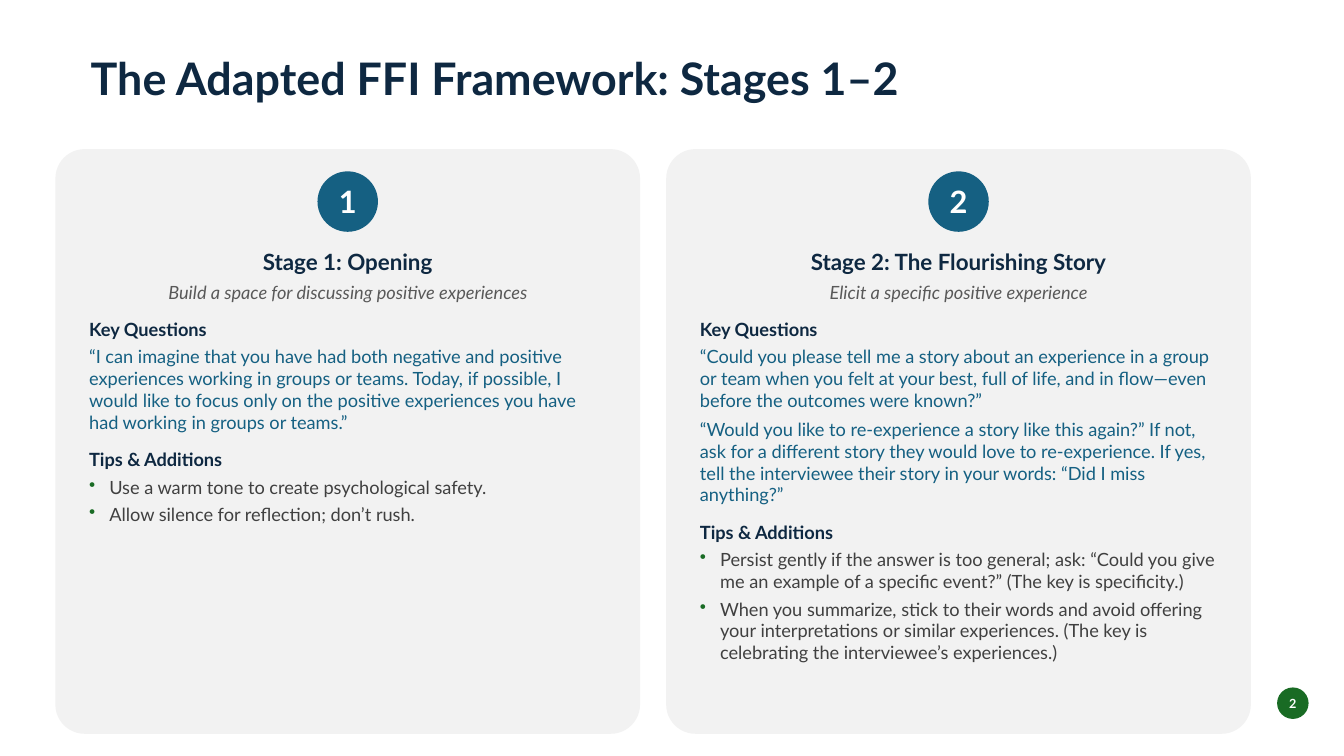
"""Build the slide on stages 1 and 2 of the adapted FFI framework."""
from lxml import etree
from pptx import Presentation
from pptx.dml.color import RGBColor
from pptx.enum.shapes import MSO_SHAPE
from pptx.enum.text import MSO_ANCHOR, MSO_AUTO_SIZE, PP_ALIGN
from pptx.oxml.ns import qn
from pptx.util import Pt

OVAL, ROUND = MSO_SHAPE.OVAL, MSO_SHAPE.ROUNDED_RECTANGLE
TOP, MIDDLE = MSO_ANCHOR.TOP, MSO_ANCHOR.MIDDLE
LEFT, CENTER = PP_ALIGN.LEFT, PP_ALIGN.CENTER
NAVY = RGBColor(0x0E, 0x28, 0x41)
TEAL = RGBColor(0x15, 0x60, 0x82)
GREEN = RGBColor(0x19, 0x6B, 0x24)
PALE = RGBColor(0xF2, 0xF2, 0xF2)
GRAY = RGBColor(0x59, 0x59, 0x59)
DARK = RGBColor(0x40, 0x40, 0x40)
WHITE = RGBColor(0xFF, 0xFF, 0xFF)
FONT = "Lato"

TITLE = "The Adapted FFI Framework: Stages 1–2"
PAGE = "2"
STAGES = [
    [
        ("name", "Stage 1: Opening"),
        ("goal", "Build a space for discussing positive experiences"),
        ("head", "Key Questions"),
        ("quote", "“I can imagine that you have had both negative and positive "
                  "experiences working in groups or teams. Today, if possible, I would "
                  "like to focus only on the positive experiences you have had working "
                  "in groups or teams.”"),
        ("head", "Tips & Additions"),
        ("tip", "Use a warm tone to create psychological safety."),
        ("tip", "Allow silence for reflection; don’t rush."),
    ],
    [
        ("name", "Stage 2: The Flourishing Story"),
        ("goal", "Elicit a specific positive experience"),
        ("head", "Key Questions"),
        ("quote", "“Could you please tell me a story about an experience in a group or "
                  "team when you felt at your best, full of life, and in flow—even "
                  "before the outcomes were known?”"),
        ("more", "“Would you like to re-experience a story like this again?” If not, "
                 "ask for a different story they would love to re-experience. If yes, "
                 "tell the interviewee their story in your words: “Did I miss "
                 "anything?”"),
        ("head", "Tips & Additions"),
        ("tip", "Persist gently if the answer is too general; ask: “Could you give me "
                "an example of a specific event?” (The key is specificity.)"),
        ("tip", "When you summarize, stick to their words and avoid offering your "
                "interpretations or similar experiences. (The key is celebrating the "
                "interviewee’s experiences.)"),
    ],
]

# size, color, bold, italic, align, space before
STYLES = {
    "title": (32, NAVY, True, False, LEFT, 0),
    "badge": (22, WHITE, True, False, CENTER, 0),
    "page": (9, WHITE, True, False, CENTER, 0),
    "name": (16, NAVY, True, False, CENTER, 0),
    "goal": (13, GRAY, False, True, CENTER, 4),
    "head": (13, NAVY, True, False, LEFT, 11),
    "quote": (13, TEAL, False, False, LEFT, 4),
    "more": (13, TEAL, False, False, LEFT, 5),
    "tip": (13, DARK, False, False, LEFT, 4),
}

CARD, EDGE, STEP, HEAD = 417.6, 39.6, 436.32, 106.56
BADGE, DROP = 43.2, 15.84


def bullet(para):
    """Give a paragraph a hanging green bullet."""
    props = para._p.get_or_add_pPr()
    for key, inset in {"marL": 14.4, "indent": -14.4}.items():
        props.set(key, str(int(Pt(inset))))
    color = etree.SubElement(props, qn("a:buClr"))
    etree.SubElement(color, qn("a:srgbClr")).set("val", str(GREEN))
    etree.SubElement(props, qn("a:buChar")).set("char", "•")


def write(shape, lines, anchor, pads=(0, 0, 0, 0)):
    """Fill a shape with styled paragraphs."""
    frame = shape.text_frame
    frame.word_wrap = True
    frame.auto_size = MSO_AUTO_SIZE.NONE
    frame.vertical_anchor = anchor
    for side, pad in zip(("left", "top", "right", "bottom"), pads):
        setattr(frame, f"margin_{side}", Pt(pad))
    for i, (kind, text) in enumerate(lines):
        para = frame.add_paragraph() if i else frame.paragraphs[0]
        size, color, bold, italic, align, gap = STYLES[kind]
        para.alignment = align
        para.space_before = Pt(gap)
        if kind == "tip":
            bullet(para)
        run = para.add_run()
        run.text = text
        run.font.color.rgb = color
        looks = {"name": FONT, "size": Pt(size), "bold": bold, "italic": italic}
        for key, value in looks.items():
            setattr(run.font, key, value)


def block(slide, form, box, fill):
    """Add a flat shape without an outline."""
    shape = slide.shapes.add_shape(form, *map(Pt, box))
    shape.shadow.inherit = False
    shape.fill.solid()
    shape.fill.fore_color.rgb = fill
    shape.line.fill.background()
    return shape


def main():
    """Lay out the slide and save it."""
    deck = Presentation()
    deck.slide_width, deck.slide_height = Pt(960), Pt(540)
    slide = deck.slides.add_slide(deck.slide_layouts[5])

    title = slide.shapes.title
    place = {"left": 57.6, "top": 32.4, "width": 844.56, "height": 64.8}
    for key, value in place.items():
        setattr(title, key, Pt(value))
    write(title, [("title", TITLE)], TOP, (7.2, 3.6, 7.2, 3.6))

    for i, lines in enumerate(STAGES):
        left = EDGE + i * STEP
        card = block(slide, ROUND, (left, HEAD, CARD, CARD), PALE)
        card.adjustments[0] = 0.05
        write(card, lines, TOP, (18, 64.8, 18, 3.6))
        spot = (left + (CARD - BADGE) / 2, HEAD + DROP, BADGE, BADGE)
        badge = block(slide, OVAL, spot, TEAL)
        write(badge, [("badge", str(i + 1))], MIDDLE)

    page = block(slide, OVAL, (912.24, 491.04, 22.5, 22.5), GREEN)
    write(page, [("page", PAGE)], MIDDLE)
    deck.save("out.pptx")


if __name__ == "__main__":
    main()
